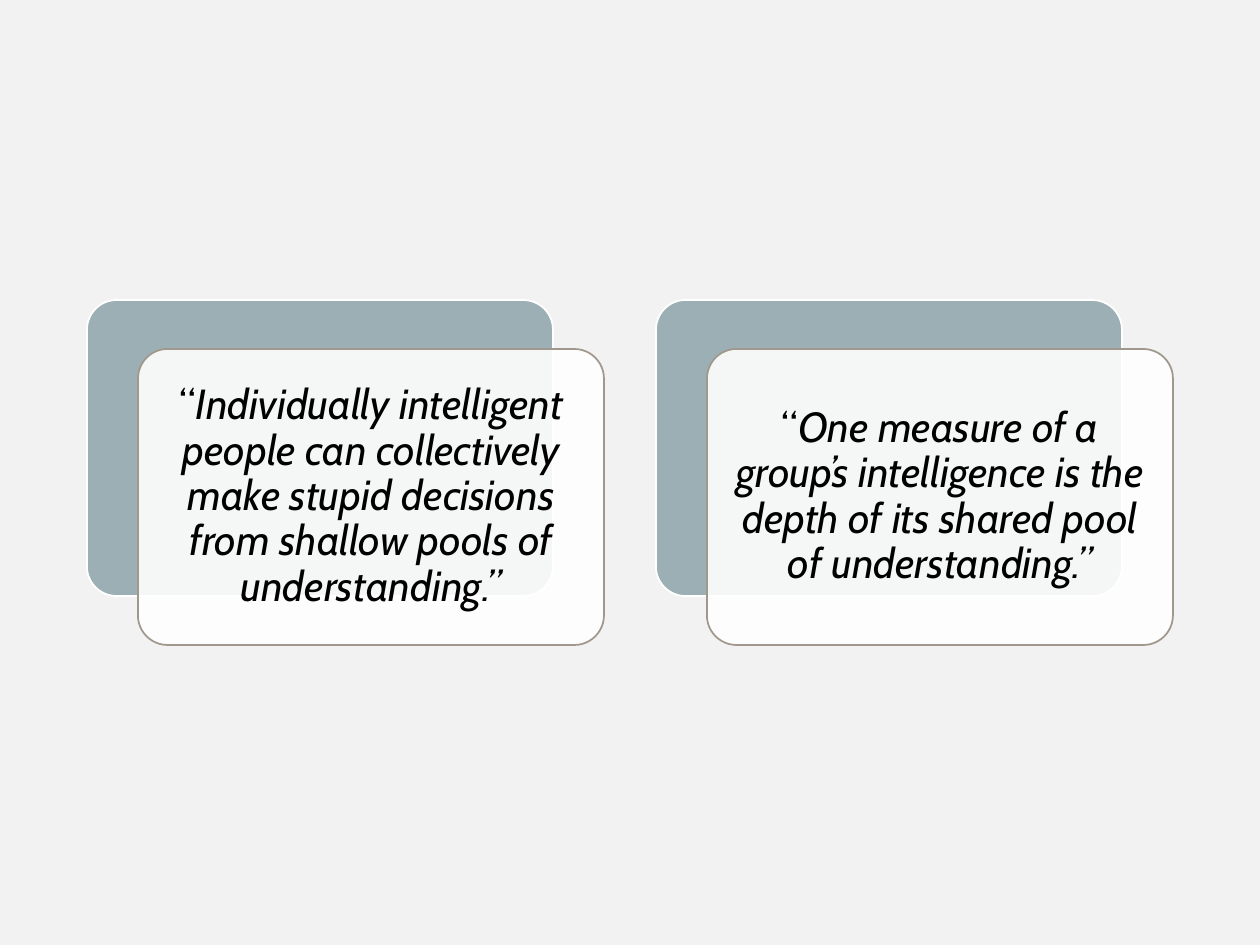
from lxml.etree import SubElement
from pptx import Presentation
from pptx.dml.color import RGBColor
from pptx.enum.shapes import MSO_SHAPE
from pptx.enum.text import MSO_ANCHOR, PP_ALIGN
from pptx.oxml.ns import qn
from pptx.util import Pt

EMU_PER_PX = 914400 / 126
COLORS = {
    "background": "F2F2F2",
    "panel": "9BAFB5",
    "panel_line": "FFFFFF",
    "card": "FFFFFF",
    "card_line": "A0988C",
    "text": "000000",
}
QUOTES = [
    "Individually intelligent people can collectively make stupid decisions "
    "from shallow pools of understanding.”",
    "One measure of a group’s intelligence is the depth of its shared pool "
    "of understanding.”",
]
FRAME_FORMAT = {
    "word_wrap": True,
    "vertical_anchor": MSO_ANCHOR.MIDDLE,
    "margin_left": Pt(7.2),
    "margin_right": Pt(7.2),
    "margin_top": Pt(7.2),
    "margin_bottom": Pt(7.2),
}
PARAGRAPH_FORMAT = {
    "alignment": PP_ALIGN.CENTER,
    "line_spacing": 0.9,
    "space_after": Pt(8.4),
}
FONT_FORMAT = {"name": "Cabin", "size": Pt(24)}


def px(length):
    """Turn pixels into EMU."""
    return round(length * EMU_PER_PX)


def color(name):
    """Return a named colour."""
    return RGBColor.from_string(COLORS[name])


def apply_format(target, values):
    """Set each attribute of the target from a dict."""
    for name, value in values.items():
        setattr(target, name, value)


def add_rounded_box(shapes, box, name, opacity=100):
    """Add a rounded rectangle with the named fill and line colours."""
    shape = shapes.add_shape(MSO_SHAPE.ROUNDED_RECTANGLE, *map(px, box))
    shape.adjustments[0] = 0.1
    shape.shadow.inherit = False
    shape.fill.solid()
    shape.fill.fore_color.rgb = color(name)
    shape.line.color.rgb = color(f"{name}_line")
    shape.line.width = Pt(1)
    if opacity < 100:
        fill_color = shape._element.spPr.find(qn("a:solidFill"))[0]
        SubElement(fill_color, qn("a:alpha"), val=str(opacity * 1000))


def add_quote_text(shapes, box, quote):
    """Add a centred quote with an upright opening mark and italic words."""
    frame = shapes.add_textbox(*map(px, box)).text_frame
    apply_format(frame, FRAME_FORMAT)
    paragraph = frame.paragraphs[0]
    apply_format(paragraph, PARAGRAPH_FORMAT)
    for text, italic in (("“", False), (quote, True)):
        run = paragraph.add_run()
        run.text = text
        apply_format(run.font, {**FONT_FORMAT, "italic": italic})
        run.font.color.rgb = color("text")


def add_quote_card(shapes, box, quote):
    """Add a panel, an overlapping card and its quote within the box."""
    left, top, width, height = box
    shift_x, shift_y, inset = 51, 49, 9
    card_width, card_height = width - shift_x, height - shift_y
    card_left, card_top = left + shift_x, top + shift_y
    add_rounded_box(shapes, (left, top, card_width, card_height), "panel")
    add_rounded_box(
        shapes, (card_left, card_top, card_width, card_height), "card", 90
    )
    text_box = (
        card_left + inset,
        card_top + inset,
        card_width - 2 * inset,
        card_height - 2 * inset,
    )
    add_quote_text(shapes, text_box, quote)


def add_quote_row(slide, box, quotes):
    """Spread the quote cards evenly across the box in one group."""
    left, top, width, height = box
    gap = 52
    card_width = (width - gap * (len(quotes) - 1)) // len(quotes)
    group = slide.shapes.add_group_shape()
    for index, quote in enumerate(quotes):
        card_left = left + index * (card_width + gap)
        add_quote_card(group.shapes, (card_left, top, card_width, height), quote)


def main():
    """Build and save the presentation."""
    presentation = Presentation()
    presentation.slide_width = px(1260)
    presentation.slide_height = px(945)
    slide = presentation.slides.add_slide(presentation.slide_layouts[6])
    slide.background.fill.solid()
    slide.background.fill.fore_color.rgb = color("background")
    add_quote_row(slide, (87, 300, 1086, 345), QUOTES)
    presentation.save("out.pptx")


if __name__ == "__main__":
    main()
